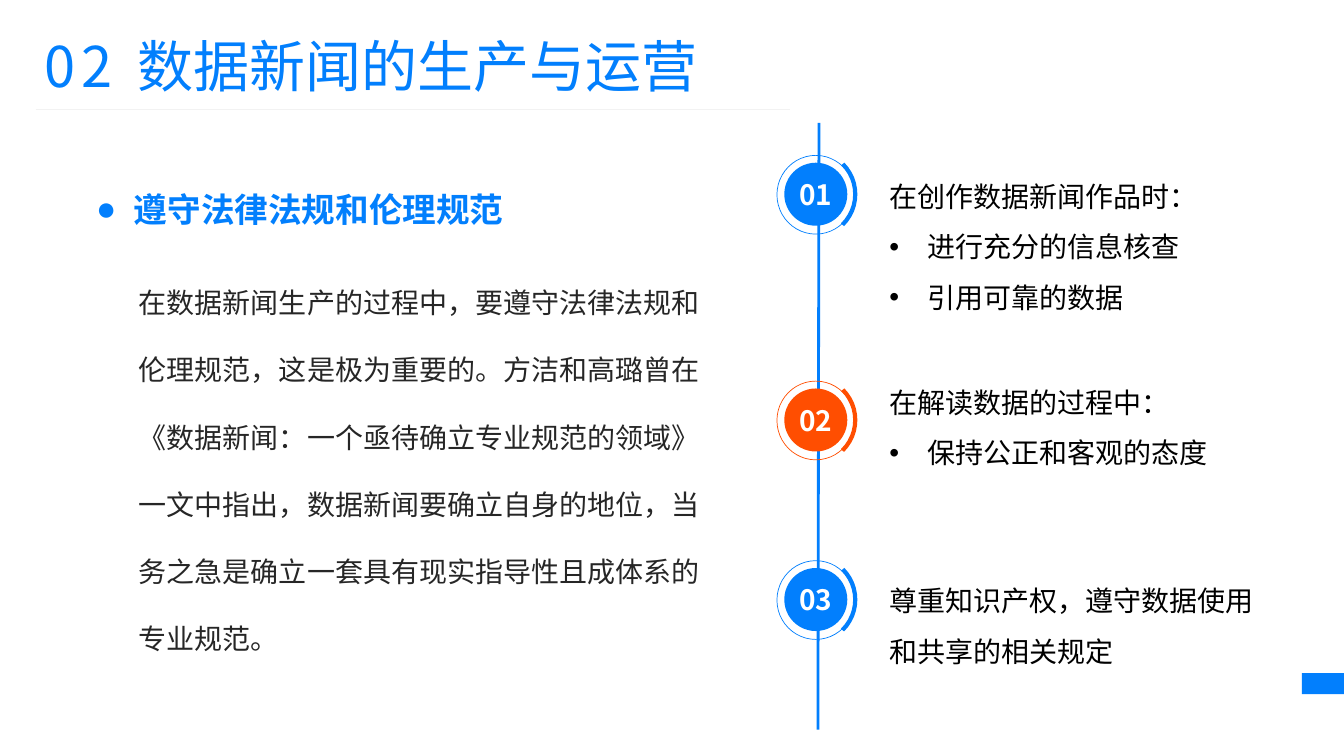
from lxml.etree import SubElement as Sub
from pptx import Presentation
from pptx.dml.color import RGBColor as Rgb
from pptx.enum.shapes import MSO_CONNECTOR as Conn, MSO_SHAPE as Geo
from pptx.enum.text import MSO_ANCHOR as Anchor, PP_ALIGN as Align
from pptx.oxml.ns import qn
from pptx.util import Pt

PX = 9525
FONT = "Noto Sans CJK SC"
HUE = {"blue": "027FFD", "red": "FF4E01", "white": "FFFFFF",
       "black": "000000", "dark": "262626", "rule": "F2F2F2"}


def emu(*nums):
    return [n * PX for n in nums]


def tint(name):
    return Rgb.from_string(HUE[name])


def bullet(para, mark, step=36):
    props = para._p.get_or_add_pPr()
    props.set("marL", str(step * PX))
    props.set("indent", str(-step * PX))
    Sub(props, qn("a:buFont")).set("typeface", "Arial")
    Sub(props, qn("a:buChar")).set("char", mark)


def write(shape, lines, size=20, hue="black", bold=False, align=Align.LEFT,
          space=1.0, anchor=Anchor.TOP, wrap=True, inset=0):
    """Each line is a (bullet mark, text) pair; returns the last run."""
    frame = shape.text_frame
    frame.word_wrap = wrap
    frame.vertical_anchor = anchor
    frame.margin_left = frame.margin_right = inset * PX
    frame.margin_top = frame.margin_bottom = inset // 2 * PX
    for i, (mark, text) in enumerate(lines):
        para = frame.add_paragraph() if i else frame.paragraphs[0]
        para.alignment = align
        para.line_spacing = space
        if mark:
            bullet(para, mark)
        run = para.add_run()
        run.text = text
        style(run, size, hue, bold)
    return run


def style(run, size, hue, bold=False):
    font = run.font
    font.size, font.bold, font.name = Pt(size), bold, FONT
    font.color.rgb = tint(hue)
    Sub(run._r.get_or_add_rPr(), qn("a:ea")).set("typeface", FONT)


def label(slide, box, lines, **form):
    return write(slide.shapes.add_textbox(*emu(*box)), lines, **form)


def draw(slide, geo, box, fill=None, line=None, width=1):
    shape = slide.shapes.add_shape(geo, *emu(*box))
    shape.shadow.inherit = False
    if fill:
        shape.fill.solid()
        shape.fill.fore_color.rgb = tint(fill)
    else:
        shape.fill.background()
    if line:
        shape.line.color.rgb = tint(line)
        shape.line.width = Pt(width)
    else:
        shape.line.fill.background()
    return shape


def rule(slide, ends, hue, width):
    line = slide.shapes.add_connector(Conn.STRAIGHT, *emu(*ends))
    line.line.color.rgb = tint(hue)
    line.line.width = Pt(width)
    Sub(line._element.spPr, qn("a:effectLst"))


def header(slide, x, y, w, h):
    box = slide.shapes.add_textbox(*emu(x, y, w, h))
    gap = write(box, [("", "02 ")], size=40, hue="blue", inset=10)
    gap.font._element.set("spc", "450")
    run = box.text_frame.paragraphs[0].add_run()
    run.text = "数据新闻的生产与运营"
    style(run, 40, "blue")
    rule(slide, (x + 2, y + 79, x + 720, y + 79), "rule", 0.5)


def badge(slide, x, y, num, hue):
    draw(slide, Geo.OVAL, (x, y, 74, 75), line=hue, width=0.5)
    disc = draw(slide, Geo.OVAL, (x + 7, y + 7, 60, 60), fill=hue)
    write(disc, [("", num)], hue="white", bold=True, align=Align.CENTER,
          anchor=Anchor.MIDDLE, wrap=False)
    arc = draw(slide, Geo.ARC, (x - 6, y - 3, 81, 80), line=hue, width=3)
    arc.rotation = 270
    arc.adjustments[0], arc.adjustments[1] = 26.57, 81.76


def timeline(slide, x, y, w, h):
    rule(slide, (x + 40, y, x + 39, y + h), "blue", 2)
    steps = [
        (31, 38, "blue", [("", "在创作数据新闻作品时："),
                          ("•", "进行充分的信息核查"),
                          ("•", "引用可靠的数据")]),
        (246, 234, "red", [("", "在解读数据的过程中："),
                           ("•", "保持公正和客观的态度")]),
        (417, 423, "blue", [("", "尊重知识产权，遵守数据使用和共享的相关规定")]),
    ]
    for i, (top, text, hue, lines) in enumerate(steps, 1):
        badge(slide, x, y + top, f"{i:02}", hue)
        label(slide, (x + 107, y + text, w - 107, 48 * max(2, len(lines))),
              lines, space=1.5)


def story(slide, x, y, w, h):
    label(slide, (x, y, 439, 42), [("●", "遵守法律法规和伦理规范")], size=24,
          hue="blue", bold=True, align=Align.CENTER, anchor=Anchor.BOTTOM)
    body = ("在数据新闻生产的过程中，要遵守法律法规和伦理规范，这是极为重要的。"
            "方洁和高璐曾在 《数据新闻：一个亟待确立专业规范的领域》 一文中指出，"
            "数据新闻要确立自身的地位，当务之急是确立一套具有现实指导性且成体系的"
            "专业规范。")
    label(slide, (x + 66, y + 64, w - 66, h - 64), [("", body)],
          hue="dark", align=Align.JUSTIFY, space=2.0)


def main():
    deck = Presentation()
    deck.slide_width, deck.slide_height = emu(1280, 720)
    slide = deck.slides.add_slide(deck.slide_layouts[6])
    # Page tag at the right edge
    draw(slide, Geo.RECTANGLE, (1240, 641, 40, 20), fill="blue")
    header(slide, 32, 25, 737, 74)
    timeline(slide, 740, 117, 464, 578)
    story(slide, 66, 176, 601, 457)
    deck.save("out.pptx")


if __name__ == "__main__":
    main()
